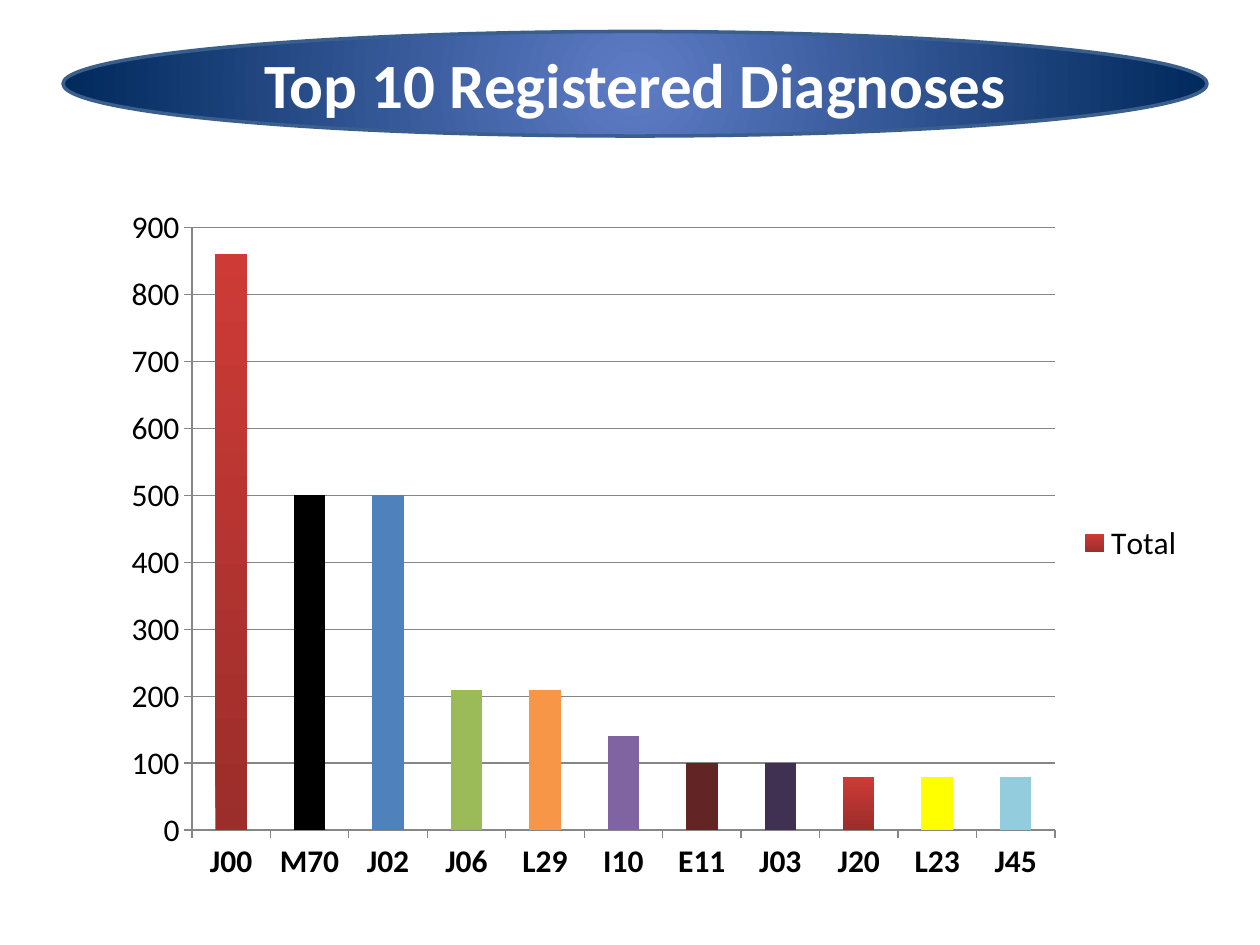
from lxml import etree
from pptx import Presentation
from pptx.chart.data import CategoryChartData
from pptx.dml.color import RGBColor
from pptx.enum.chart import XL_CHART_TYPE as ChartType
from pptx.enum.chart import XL_LEGEND_POSITION as LegendPosition
from pptx.enum.chart import XL_TICK_MARK as TickMark
from pptx.enum.shapes import MSO_SHAPE as ShapeType
from pptx.enum.text import MSO_ANCHOR as Anchor
from pptx.enum.text import PP_ALIGN as Align
from pptx.oxml import parse_xml
from pptx.oxml.ns import nsdecls, qn
from pptx.util import Inches, Pt

DIAGNOSES = [
    ("J00", 860, None),
    ("M70", 500, "000000"),
    ("J02", 500, "4F81BD"),
    ("J06", 210, "9BBB59"),
    ("L29", 210, "F79646"),
    ("I10", 140, "8064A2"),
    ("E11", 100, "632523"),
    ("J03", 100, "403152"),
    ("J20", 80, None),
    ("L23", 80, "FFFF00"),
    ("J45", 80, "93CDDD"),
]


def color(value):
    return RGBColor.from_string(value)


class DiagnosisSlide:
    font = "Calibri"
    axis_color = "868686"

    def __init__(self, page):
        self.page = page

    def style_font(self, font, size, value, bold=False):
        font.name = self.font
        font.size = Pt(size)
        font.bold = bold
        font.color.rgb = color(value)

    def gradient(self, fill, start, end):
        fill.gradient()
        for stop, value in zip(fill.gradient_stops, (start, end)):
            stop.color.rgb = color(value)

    def title_ellipse(self, text, left, top, width, height):
        ellipse = self.page.shapes.add_shape(
            ShapeType.OVAL, Inches(left), Inches(top), Inches(width), Inches(height)
        )
        ellipse.shadow.inherit = False
        self.gradient(ellipse.fill, "5E7CC5", "00295C")
        linear = next(ellipse.element.spPr.iter(qn("a:lin")))
        radial = parse_xml(f'<a:path {nsdecls("a")} path="circle"/>')
        center = etree.SubElement(radial, qn("a:fillToRect"))
        for side in "ltrb":
            center.set(side, "50000")
        linear.getparent().replace(linear, radial)
        ellipse.line.color.rgb = color("3A5F8C")
        ellipse.line.width = Pt(2)

        frame = ellipse.text_frame
        frame.text = text
        frame.word_wrap = True
        frame.vertical_anchor = Anchor.MIDDLE
        para = frame.paragraphs[0]
        para.alignment = Align.CENTER
        self.style_font(para.runs[0].font, 36, "FFFFFF", bold=True)

    def place_plot(self, chart, **bounds):
        plot_area = chart.plots[0]._element.getparent()
        for old in plot_area.findall(qn("c:layout")):
            plot_area.remove(old)
        layout = parse_xml(f'<c:layout {nsdecls("c")}/>')
        manual = etree.SubElement(layout, qn("c:manualLayout"))
        settings = {"layoutTarget": "inner", "xMode": "edge", "yMode": "edge", **bounds}
        for name, value in settings.items():
            etree.SubElement(manual, qn(f"c:{name}")).set("val", str(value))
        plot_area.insert(0, layout)

    def style_axis(self, axis, bold):
        self.style_font(axis.tick_labels.font, 18, "000000", bold)
        axis.major_tick_mark = TickMark.OUTSIDE
        axis.minor_tick_mark = TickMark.NONE
        axis.format.line.color.rgb = color(self.axis_color)

    def column_chart(self, name, rows, left, top, width, height):
        codes, totals, colors = zip(*rows)
        data = CategoryChartData()
        data.categories = codes
        data.add_series(name, totals)
        chart = self.page.shapes.add_chart(
            ChartType.COLUMN_CLUSTERED,
            Inches(left), Inches(top), Inches(width), Inches(height), data,
        ).chart
        chart.has_title = False
        self.style_font(chart.font, 18, "000000")
        chart.has_legend = True
        chart.legend.position = LegendPosition.RIGHT
        chart.legend.include_in_layout = False

        plot = chart.plots[0]
        plot.gap_width = 150
        plot.vary_by_categories = False
        series = plot.series[0]
        series.invert_if_negative = False
        self.gradient(series.format.fill, "9B2D2A", "CE3B37")
        series.format.fill.gradient_angle = 90
        for index, value in enumerate(colors):
            if value:
                fill = series.points[index].format.fill
                fill.solid()
                fill.fore_color.rgb = color(value)

        self.style_axis(chart.category_axis, bold=True)
        axis = chart.value_axis
        self.style_axis(axis, bold=False)
        axis.minimum_scale = 0
        axis.maximum_scale = 900
        axis.major_unit = 100
        axis.has_major_gridlines = True
        axis.major_gridlines.format.line.color.rgb = color(self.axis_color)
        self.place_plot(chart, x=0.08, y=0.05, w=0.79, h=0.86)


def main():
    deck = Presentation()
    deck.slide_width = Inches(10)
    deck.slide_height = Inches(7.5)
    slide = DiagnosisSlide(deck.slides.add_slide(deck.slide_layouts[6]))
    slide.title_ellipse("Top 10 Registered Diagnoses", 0.5, 0.25, 9.08, 0.83)
    slide.column_chart("Total", DIAGNOSES, 0.83, 1.53, 8.67, 5.56)
    deck.save("out.pptx")


if __name__ == "__main__":
    main()
